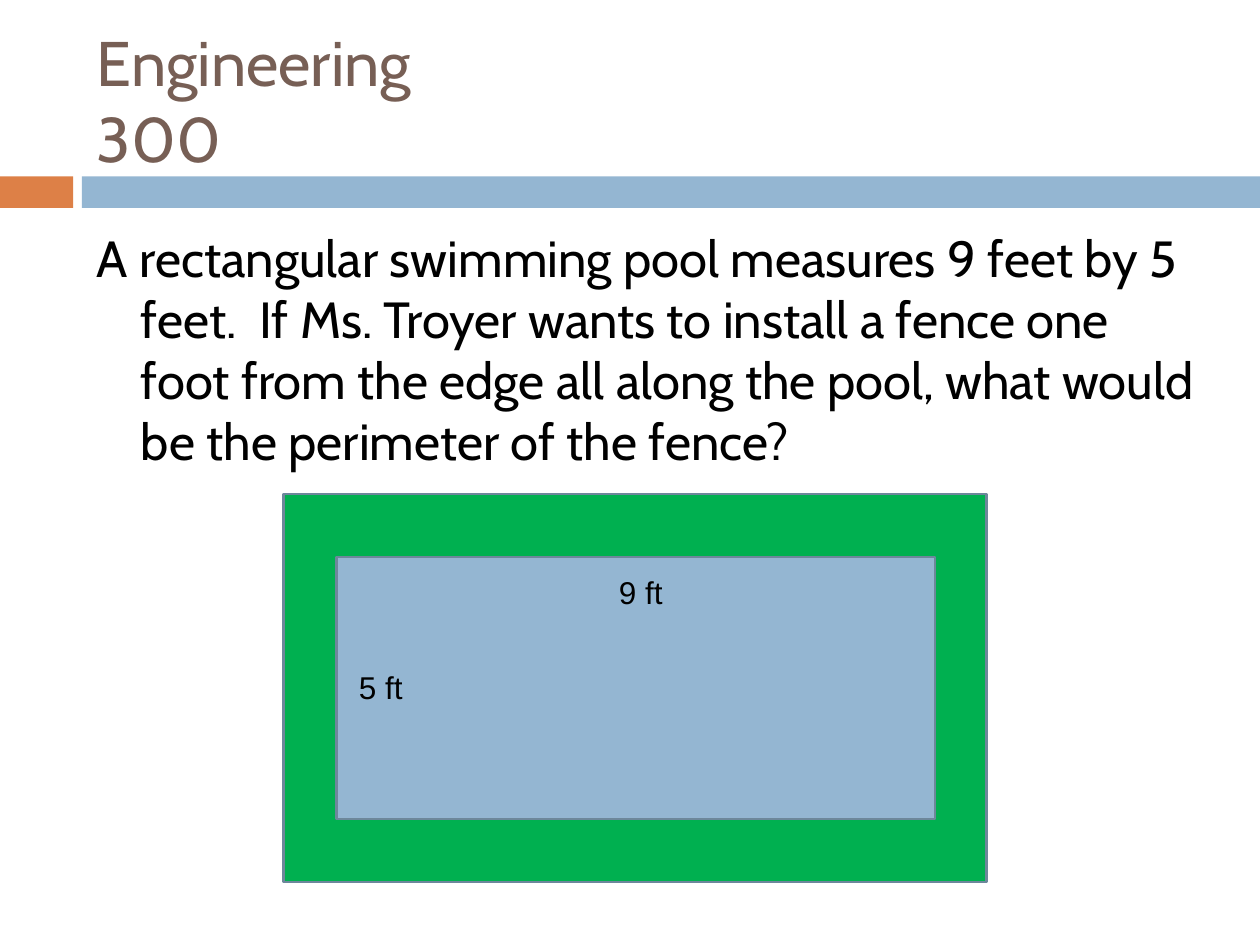
from pptx import Presentation
from pptx import util as u
from pptx.dml.color import RGBColor
from pptx.enum import shapes, text

ORANGE = RGBColor(0xDD, 0x80, 0x47)
BLUE = RGBColor(0x94, 0xB6, 0xD2)
GREEN = RGBColor(0x00, 0xB0, 0x50)
OUTLINE = RGBColor(0x6D, 0x87, 0x9B)
BROWN = RGBColor(0x77, 0x5F, 0x55)
BLACK = RGBColor(0x00, 0x00, 0x00)


class SlideBuilder:
    heading_font = "Cabin"
    label_font = "Arial"

    def __init__(self, slide):
        self.slide = slide

    def rectangle(self, left, top, width, height, fill, outline=None):
        shape = self.slide.shapes.add_shape(
            shapes.MSO_SHAPE.RECTANGLE,
            u.Inches(left), u.Inches(top), u.Inches(width), u.Inches(height))
        shape.shadow.inherit = False
        shape.fill.solid()
        shape.fill.fore_color.rgb = fill
        if outline is None:
            shape.line.fill.background()
        else:
            shape.line.color.rgb = outline
            shape.line.width = u.Pt(1.5)

    def text_box(self, left, top, width, height, words, size, font,
                 color=BLACK, anchor=text.MSO_ANCHOR.TOP,
                 align=text.PP_ALIGN.LEFT, hanging=0):
        """Add one paragraph; hanging is the indent of its later lines."""
        box = self.slide.shapes.add_textbox(
            u.Inches(left), u.Inches(top), u.Inches(width), u.Inches(height))
        frame = box.text_frame
        frame.word_wrap = True
        frame.vertical_anchor = anchor
        paragraph = frame.paragraphs[0]
        paragraph.text = words
        paragraph.alignment = align
        if hanging:
            properties = paragraph._p.get_or_add_pPr()
            properties.set("marL", str(u.Inches(hanging)))
            properties.set("indent", str(-u.Inches(hanging)))
        for run in paragraph.runs:
            run.font.name = font
            run.font.size = u.Pt(size)
            run.font.color.rgb = color

    def title(self, words):
        self.text_box(0.67, 0.25, 8.92, 1.08, words, 36, self.heading_font,
                      BROWN, text.MSO_ANCHOR.MIDDLE)

    def question(self, words):
        self.text_box(0.67, 1.75, 8.92, 4.92, words, 29, self.heading_font,
                      hanging=0.35)

    def label(self, left, top, width, words, align=text.PP_ALIGN.LEFT):
        self.text_box(left, top, width, 0.4, words, 18, self.label_font,
                      align=align)


def main():
    presentation = Presentation()
    presentation.slide_width = u.Inches(10)
    presentation.slide_height = u.Inches(7.5)
    slide = presentation.slides.add_slide(presentation.slide_layouts[6])
    builder = SlideBuilder(slide)

    builder.rectangle(0, 1.4, 0.58, 0.25, ORANGE)
    builder.rectangle(0.65, 1.4, 9.35, 0.25, BLUE)
    builder.title("Engineering\n300")
    builder.question(
        "A rectangular swimming pool measures 9 feet by 5 feet.  "
        "If Ms. Troyer wants to install a fence one foot from the edge "
        "all along the pool, what would be the perimeter of the fence?")

    # Fenced area, then the pool inside it
    builder.rectangle(2.25, 3.92, 5.58, 3.08, GREEN, OUTLINE)
    builder.rectangle(2.67, 4.42, 4.75, 2.08, BLUE, OUTLINE)
    builder.label(3.92, 4.5, 2.33, "9 ft", text.PP_ALIGN.CENTER)
    builder.label(2.75, 5.25, 0.75, "5 ft")

    presentation.save("out.pptx")


if __name__ == "__main__":
    main()
